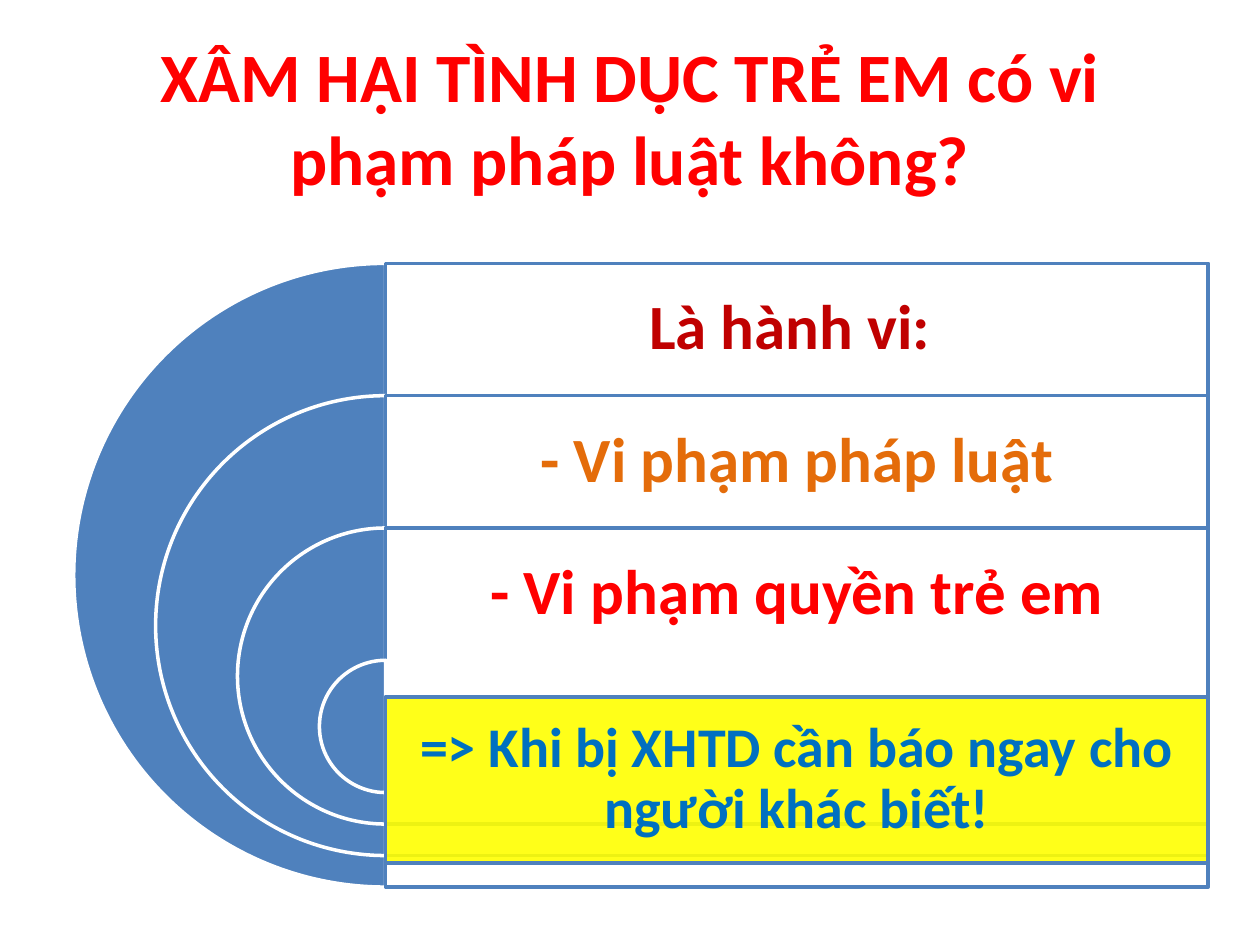
"""Build a slide with a title and nested half rings beside stacked text panels."""
from lxml import etree
from pptx import Presentation
from pptx.dml.color import RGBColor
from pptx.enum.shapes import MSO_SHAPE
from pptx.enum.text import MSO_ANCHOR, MSO_AUTO_SIZE, PP_ALIGN
from pptx.oxml.ns import qn
from pptx.util import Inches, Pt

PIE, RECT = MSO_SHAPE.PIE, MSO_SHAPE.RECTANGLE
MIDDLE, CENTER, NO_FIT = MSO_ANCHOR.MIDDLE, PP_ALIGN.CENTER, MSO_AUTO_SIZE.NONE

TITLE = "XÂM HẠI TÌNH DỤC TRẺ EM có vi phạm pháp luật không?"
BLUE, WHITE, YELLOW, RED = "4F81BD", "FFFFFF", "FFFF00", "FF0000"
ROWS = [
    ("Là hành vi: ", "C00000"),
    ("- Vi phạm pháp luật", "E46C0A"),
    ("- Vi phạm quyền trẻ em", RED),
]
CALL = ("=> Khi bị XHTD cần báo ngay cho người khác biết!", "0070C0")

AXIS, TOP, PANEL_W = 3.06, 2.09, 6.53
RING, RING_STEP, ROW_H = 4.95, 1.3, 1.05
CALL_TOP, CALL_H = 5.53, 1.32


def rgb(value):
    return RGBColor.from_string(value)


def style_text(tf, text, size, color):
    tf.text = text
    tf.word_wrap = True
    tf.auto_size = NO_FIT
    tf.vertical_anchor = MIDDLE
    p = tf.paragraphs[0]
    p.alignment = CENTER
    font = p.runs[0].font
    font.name, font.size, font.bold = "Calibri", Pt(size), True
    font.color.rgb = rgb(color)


def add_shape(shapes, kind, box, fill, line):
    sp = shapes.add_shape(kind, *map(Inches, box))
    sp.shadow.inherit = False
    sp.fill.solid()
    sp.fill.fore_color.rgb = rgb(fill)
    sp.line.color.rgb = rgb(line)
    sp.line.width = Pt(2)
    return sp


def add_ring(shapes, top, size):
    sp = add_shape(shapes, PIE, (AXIS - size / 2, top, size, size), BLUE, WHITE)
    sp.adjustments[0], sp.adjustments[1] = 54, 162


def add_panel(shapes, top, height, fill):
    sp = add_shape(shapes, RECT, (AXIS, top, PANEL_W, height), fill, BLUE)
    color = sp.fill._xPr.find(qn("a:solidFill"))[0]
    etree.SubElement(color, qn("a:alpha")).set("val", "90000")


def add_label(shapes, top, height, text, color, size, inset):
    box = shapes.add_textbox(*map(Inches, (AXIS, top, PANEL_W, height)))
    tf = box.text_frame
    style_text(tf, text, size, color)
    tf.paragraphs[0].line_spacing = 0.9
    tf.margin_left = tf.margin_right = Inches(inset)
    tf.margin_top = tf.margin_bottom = Inches(inset)


def main():
    prs = Presentation()
    prs.slide_width, prs.slide_height = Inches(10), Inches(7.5)
    s = prs.slides.add_slide(prs.slide_layouts[5])
    title = s.shapes.title
    title.left, title.top, title.width, title.height = map(Inches, (0.5, 0.3, 9, 1.25))
    style_text(title.text_frame, TITLE, 39.6, RED)

    shapes = s.shapes.add_group_shape().shapes
    for i, (text, color) in enumerate(ROWS):
        top, size = TOP + i * ROW_H, RING - i * RING_STEP
        add_ring(shapes, top, size)
        add_panel(shapes, top, size, WHITE)
        add_label(shapes, top, ROW_H, text, color, 36, 0.15)
    n = len(ROWS)
    add_ring(shapes, TOP + n * ROW_H, RING - n * RING_STEP)
    add_panel(shapes, CALL_TOP, CALL_H, YELLOW)
    add_label(shapes, CALL_TOP, CALL_H, *CALL, 32, 0.13)
    prs.save("out.pptx")


if __name__ == "__main__":
    main()
